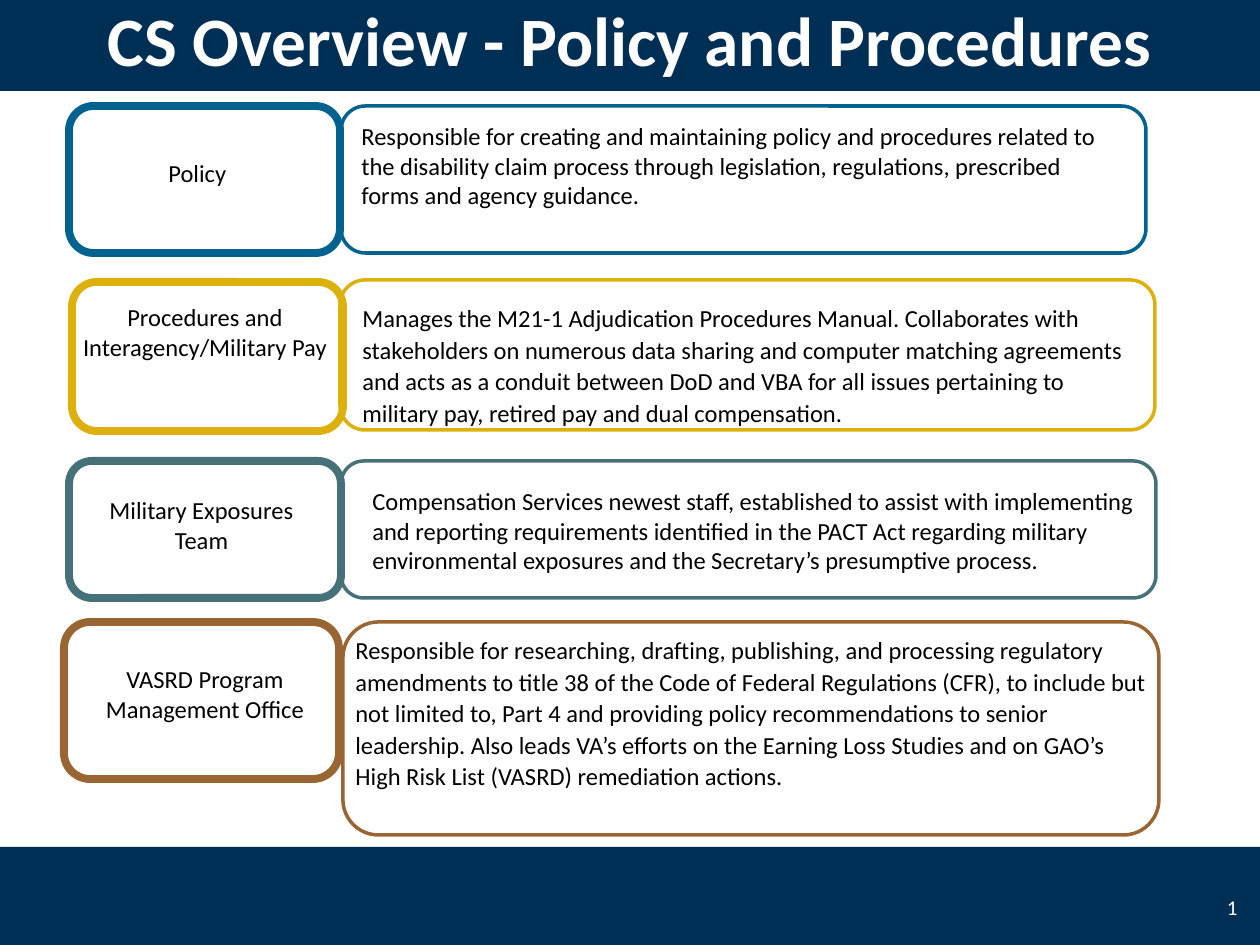
from pptx import Presentation
from pptx.util import Pt
from pptx.dml.color import RGBColor as RGB
from pptx.enum.shapes import MSO_SHAPE as SHAPE
from pptx.enum.text import PP_ALIGN as AL, MSO_ANCHOR as ANC, MSO_AUTO_SIZE as AUTO
from pptx.oxml.ns import qn

PX = 914400 / 126
C = {"navy": "002F56", "blue": "00628E", "gold": "DCB10E", "teal": "477179",
     "brown": "996633", "black": "000000", "white": "FFFFFF"}
BODY = {"name": "Calibri", "size": Pt(14)}


def box(*px):
    return [round(v * PX) for v in px]


def write(sp, text, align, color, fmt, anchor=ANC.TOP, auto=AUTO.SHAPE_TO_FIT_TEXT):
    tf = sp.text_frame
    tf.word_wrap = True
    tf.auto_size = auto
    tf.vertical_anchor = anchor
    p = tf.paragraphs[0]
    p.alignment = align
    r = p.add_run()
    r.text = text
    r.font.color.rgb = RGB.from_string(C[color])
    for key, value in fmt.items():
        setattr(r.font, key, value)
    return p, r


prs = Presentation()
prs.slide_width, prs.slide_height = box(1260, 945)
s = prs.slides.add_slide(prs.slide_layouts[5])

for top, height in [(847, 98), (0, 91)]:
    sp = s.shapes.add_shape(SHAPE.RECTANGLE, *box(0, top, 1260, height))
    sp.shadow.inherit = False
    sp.fill.solid()
    sp.fill.fore_color.rgb = RGB.from_string(C["navy"])
    sp.line.fill.background()

title = s.shapes.title
title.left, title.top, title.width, title.height = box(0, 5, 1260, 67)
write(title, "CS Overview - Policy and Procedures", AL.CENTER, "white",
      {"name": "Calibri", "size": Pt(39.6), "bold": True}, ANC.MIDDLE, AUTO.NONE)
s.shapes._spTree.append(title._element)

number = s.shapes.add_textbox(*box(1197, 882, 53, 50))
p, r = write(number, "6", AL.RIGHT, "white", {"name": "Calibri", "size": Pt(12)},
             ANC.MIDDLE, AUTO.NONE)
r._r.tag = qn("a:fld")
r._r.set("id", "{B6F15528-21DE-4FAA-801E-634DDDAF4B2B}")
r._r.set("type", "slidenum")

rows = [
    ("blue", (69, 106, 271, 147), (341, 106, 805, 147),
     (156, 152, 116, 34), "Policy", AL.LEFT,
     (349, 115, 774, 81), None,
     "Responsible for creating and maintaining policy and procedures related to the "
     "disability claim process through legislation, regulations, prescribed forms and "
     "agency guidance."),
    ("gold", (72, 282, 271, 149), (340, 280, 815, 150),
     (69, 296, 272, 72), "Procedures and Interagency/Military Pay", AL.CENTER,
     (350, 295, 808, 139), 1.07,
     "Manages the M21-1 Adjudication Procedures Manual. Collaborates with stakeholders on "
     "numerous data sharing and computer matching agreements and acts as a conduit between "
     "DoD and VBA for all issues pertaining to military pay, retired pay and dual "
     "compensation."),
    ("teal", (69, 461, 272, 137), (341, 461, 815, 137),
     (87, 489, 229, 72), "Military Exposures Team", AL.CENTER,
     (360, 480, 795, 131), None,
     "Compensation Services newest staff, established to assist with implementing and "
     "reporting requirements identified in the PACT Act regarding military environmental "
     "exposures and the Secretary’s presumptive process."),
    ("brown", (64, 622, 275, 157), (343, 622, 816, 213),
     (57, 658, 296, 72), "VASRD Program Management Office", AL.CENTER,
     (343, 627, 823, 170), 1.07,
     "Responsible for researching, drafting, publishing, and processing regulatory "
     "amendments to title 38 of the Code of Federal Regulations (CFR), to include but not "
     "limited to, Part 4 and providing policy recommendations to senior leadership. Also "
     "leads VA’s efforts on the Earning Loss Studies and on GAO’s High Risk List (VASRD) "
     "remediation actions."),
]

for color, name_box, desc_box, name_at, name, align, desc_at, spacing, desc in rows:
    grp = s.shapes.add_group_shape().shapes
    for at, width in [(name_box, 4.5), (desc_box, 2)]:
        sp = grp.add_shape(SHAPE.ROUNDED_RECTANGLE, *box(*at))
        sp.shadow.inherit = False
        sp.fill.background()
        sp.line.color.rgb = RGB.from_string(C[color])
        sp.line.width = Pt(width)
    write(grp.add_textbox(*box(*name_at)), name, align, "black", BODY)
    p, r = write(grp.add_textbox(*box(*desc_at)), desc, AL.LEFT, "black", BODY)
    if spacing:
        p.line_spacing = spacing
        p.space_after = Pt(6)

prs.save("out.pptx")
